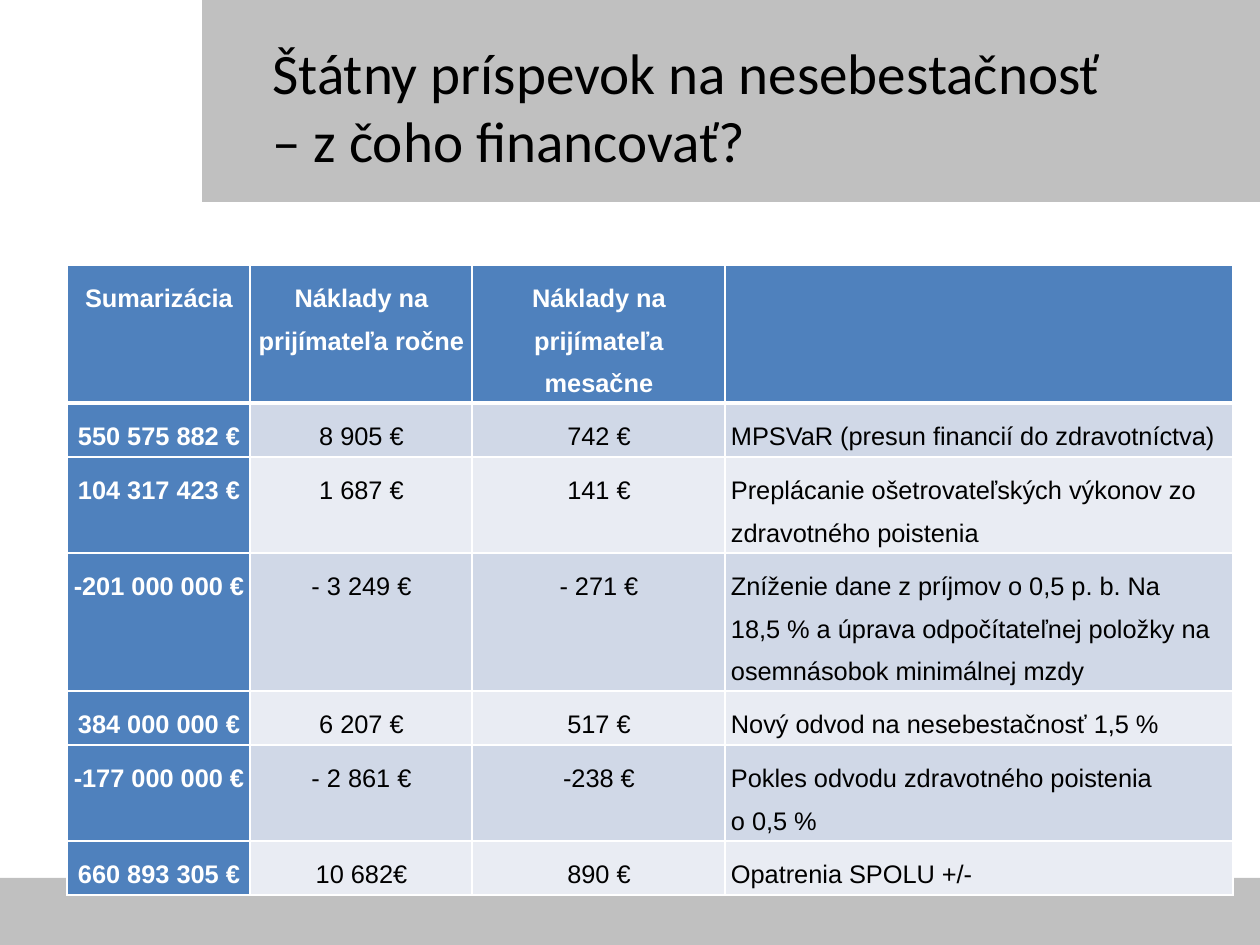
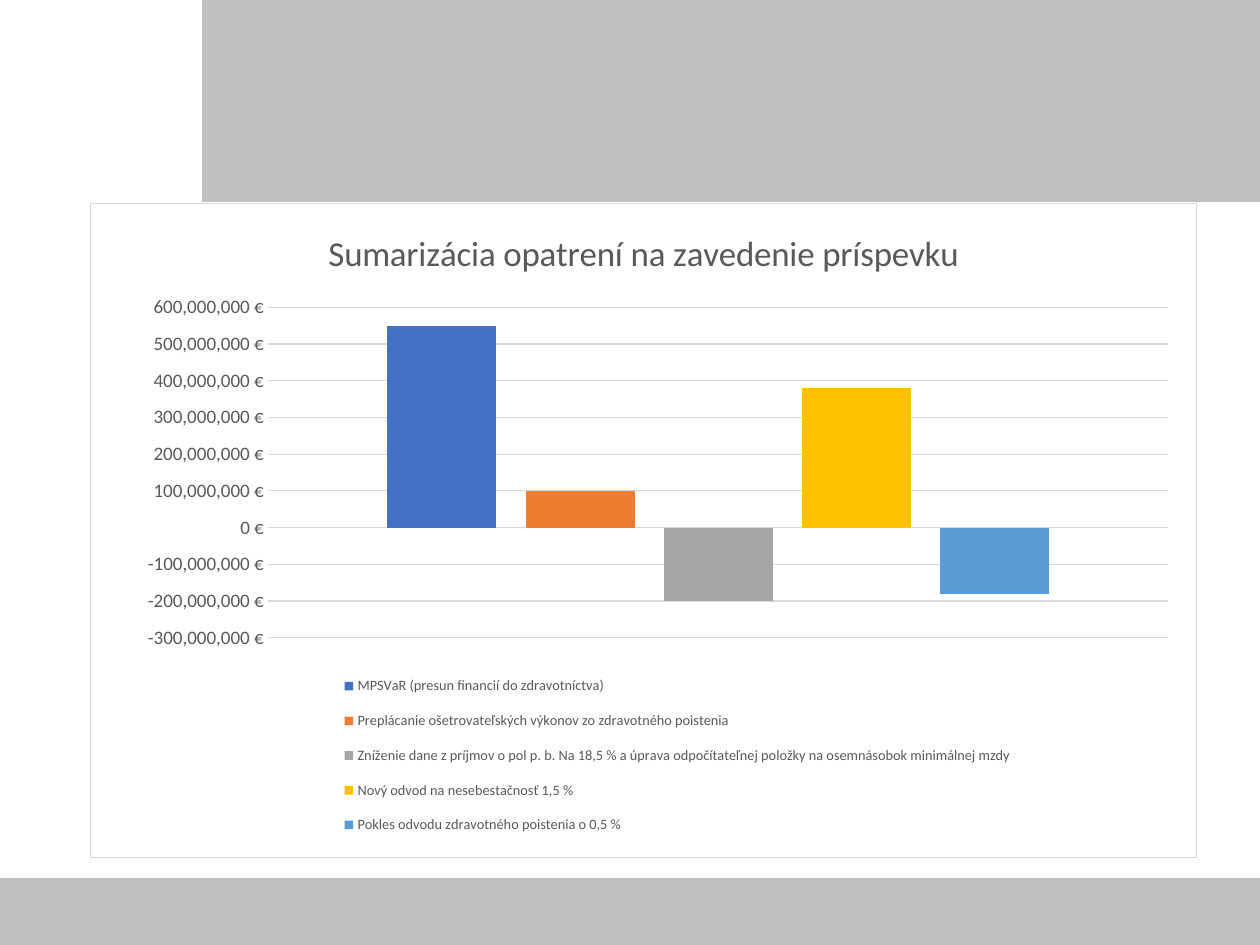
"""Build two slides on financing the state care contribution: a table and a chart."""
from lxml import etree
from pptx import Presentation, util as u
from pptx.chart import data
from pptx.dml.color import RGBColor
from pptx.enum import chart as ch, shapes, text
from pptx.oxml import ns, parse_xml

PX = 8000
HARD_SPACE = chr(160)
COLORS = {
    "band": "C0C0C0", "black": "000000", "white": "FFFFFF", "header": "4F81BD",
    "odd": "D0D8E7", "even": "E9ECF3", "gray": "595959", "grid": "D9D9D9",
}


def style_font(font, name, size, color, bold=False):
    font.name, font.size, font.bold = name, u.Pt(size), bold
    font.color.rgb = RGBColor.from_string(COLORS[color])


def chart_layout(target, x, y, width, height):
    inner = '<c:layoutTarget val="inner"/>' if target == "plot" else ""
    return parse_xml(
        f'<c:layout {ns.nsdecls("c")}><c:manualLayout>{inner}'
        '<c:xMode val="edge"/><c:yMode val="edge"/>'
        f'<c:x val="{x / chart_width}"/><c:y val="{y / chart_height}"/>'
        f'<c:w val="{width / chart_width}"/><c:h val="{height / chart_height}"/>'
        '</c:manualLayout></c:layout>')


presentation = Presentation()
presentation.slide_width, presentation.slide_height = 1260 * PX, 945 * PX
table_slide = presentation.slides.add_slide(presentation.slide_layouts[5])
chart_slide = presentation.slides.add_slide(presentation.slide_layouts[6])

bands = [(202, 0, 1058, 202), (0, 878, 1260, 67)]
for slide in presentation.slides:
    for box in bands:
        band = slide.shapes.add_shape(
            shapes.MSO_SHAPE.RECTANGLE, *[length * PX for length in box])
        band.shadow.inherit = False
        band.fill.solid()
        band.fill.fore_color.rgb = RGBColor.from_string(COLORS["band"])
        band.line.fill.background()

title = table_slide.shapes.title
title.element.getparent().append(title.element)
title.left, title.top, title.width, title.height = 261 * PX, 31 * PX, 873 * PX, 149 * PX
frame = title.text_frame
frame.auto_size = text.MSO_AUTO_SIZE.NONE
frame.word_wrap = True
frame.vertical_anchor = text.MSO_ANCHOR.MIDDLE
paragraph = frame.paragraphs[0]
paragraph.alignment = text.PP_ALIGN.LEFT
run = paragraph.add_run()
run.text = "Štátny príspevok na nesebestačnosť – z čoho financovať?"
style_font(run.font, "Calibri", 36, "black")

rows = [
    ("Sumarizácia", "Náklady na prijímateľa ročne", "Náklady na prijímateľa mesačne", ""),
    ("550~575~882 €", "8~905 €", "742 €", "MPSVaR (presun financií do zdravotníctva)"),
    ("104~317~423 €", "1~687 €", "141 €",
     "Preplácanie ošetrovateľských výkonov zo zdravotného poistenia"),
    ("-201~000~000 €", "- 3~249 €", "- 271 €",
     "Zníženie dane z~príjmov o~0,5 p.~b. Na 18,5~% a~úprava odpočítateľnej položky "
     "na osemnásobok minimálnej mzdy"),
    ("384~000~000 €", "6~207 €", "517 €", "Nový odvod na nesebestačnosť 1,5~%"),
    ("-177~000~000 €", "- 2~861 €", "-238 €", "Pokles odvodu zdravotného poistenia o~0,5~%"),
    ("660~893~305 €", "10~682€", "890 €", "Opatrenia SPOLU +/-"),
]
column_widths = [183, 222, 253, 508]
row_heights = [138, 54, 96, 138, 54, 96, 54]
table = table_slide.shapes.add_table(
    len(rows), len(column_widths), 67 * PX, 265 * PX,
    sum(column_widths) * PX, sum(row_heights) * PX).table
table.first_col = True
for column, width in zip(table.columns, column_widths):
    column.width = width * PX
for row, height in zip(table.rows, row_heights):
    row.height = height * PX

for row_index, row in enumerate(rows):
    for column_index, words in enumerate(row):
        cell = table.cell(row_index, column_index)
        heading = row_index == 0 or column_index == 0
        cell.margin_left = cell.margin_top = 6 * PX
        cell.margin_right = cell.margin_bottom = 5 * PX
        cell.fill.solid()
        fill = "header" if heading else "odd" if row_index % 2 else "even"
        cell.fill.fore_color.rgb = RGBColor.from_string(COLORS[fill])
        properties = cell._tc.get_or_add_tcPr()
        for position, side in enumerate("LRTB"):
            thick = (row_index, side) in [(0, "B"), (1, "T")]
            border = etree.Element(ns.qn(f"a:ln{side}"), w=str(u.Pt(3 if thick else 0.96)))
            border_fill = etree.SubElement(border, ns.qn("a:solidFill"))
            etree.SubElement(border_fill, ns.qn("a:srgbClr"), val=COLORS["white"])
            properties.insert(position, border)
        if words:
            paragraph = cell.text_frame.paragraphs[0]
            centered = column_index < 3
            paragraph.alignment = text.PP_ALIGN.CENTER if centered else text.PP_ALIGN.LEFT
            paragraph.line_spacing = 1.5
            run = paragraph.add_run()
            run.text = words.replace("~", HARD_SPACE)
            style_font(run.font, "Arial", 16, "white" if heading else "black", heading)

measures = [
    ("MPSVaR (presun financií do zdravotníctva)", 550, "4472C4"),
    ("Preplácanie ošetrovateľských výkonov zo zdravotného poistenia", 100, "ED7D31"),
    ("Zníženie dane z~príjmov o~pol p.~b. Na 18,5~% a~úprava odpočítateľnej položky "
     "na osemnásobok minimálnej mzdy", -200, "A5A5A5"),
    ("Nový odvod na nesebestačnosť 1,5~%", 380, "FFC000"),
    ("Pokles odvodu zdravotného poistenia o~0,5~%", -180, "5B9BD5"),
]
MILLION = 1_000_000
chart_width, chart_height = 1107, 655
chart_data = data.CategoryChartData()
chart_data.categories = ["1"]
for name, millions, _ in measures:
    chart_data.add_series(name.replace("~", HARD_SPACE), [millions * MILLION])
chart = chart_slide.shapes.add_chart(
    ch.XL_CHART_TYPE.COLUMN_CLUSTERED, 90 * PX, 203 * PX,
    chart_width * PX, chart_height * PX, chart_data).chart
style_font(chart.font, "Arial", 10, "black")

chart.has_title = True
run = chart.chart_title.text_frame.paragraphs[0].add_run()
run.text = "Sumarizácia opatrení na zavedenie príspevku"
style_font(run.font, "Calibri", 22, "gray")
chart.chart_title.include_in_layout = False

plot = chart.plots[0]
plot.gap_width, plot.overlap, plot.vary_by_categories = 219, -27, False
for series, (_, _, color) in zip(plot.series, measures):
    series.invert_if_negative = False
    series.format.fill.solid()
    series.format.fill.fore_color.rgb = RGBColor.from_string(color)

chart.category_axis.visible = False
axis = chart.value_axis
axis.minimum_scale, axis.maximum_scale = -300 * MILLION, 600 * MILLION
axis.major_unit = 100 * MILLION
axis.major_tick_mark = axis.minor_tick_mark = ch.XL_TICK_MARK.NONE
axis.tick_labels.number_format = '#,##0" €"'
axis.tick_labels.number_format_is_linked = False
style_font(axis.tick_labels.font, "Calibri", 12, "gray")
axis.format.line.fill.background()
axis.has_major_gridlines = True
axis.major_gridlines.format.line.width = u.Pt(0.75)
axis.major_gridlines.format.line.color.rgb = RGBColor.from_string(COLORS["grid"])

chart.has_legend = True
legend = chart.legend
legend.position = ch.XL_LEGEND_POSITION.BOTTOM
legend.include_in_layout = False
style_font(legend.font, "Calibri", 9, "gray")

plot_area = chart.element.xpath("c:chart/c:plotArea")[0]
for layout in chart.element.xpath("c:chart/c:plotArea/c:layout | c:chart/c:legend/c:layout"):
    layout.getparent().remove(layout)
plot_area.insert(0, chart_layout("plot", 178, 104, 901, 331))
chart.element.xpath("c:chart/c:legend/c:legendPos")[0].addnext(
    chart_layout("legend", 244, 457, 686, 192))
chart.element.xpath("c:chart")[0].addnext(parse_xml(
    f'<c:spPr {ns.nsdecls("c", "a")}>'
    f'<a:solidFill><a:srgbClr val="{COLORS["white"]}"/></a:solidFill>'
    f'<a:ln w="{u.Pt(0.75)}"><a:solidFill><a:srgbClr val="{COLORS["grid"]}"/></a:solidFill></a:ln>'
    '</c:spPr>'))

presentation.save("out.pptx")
